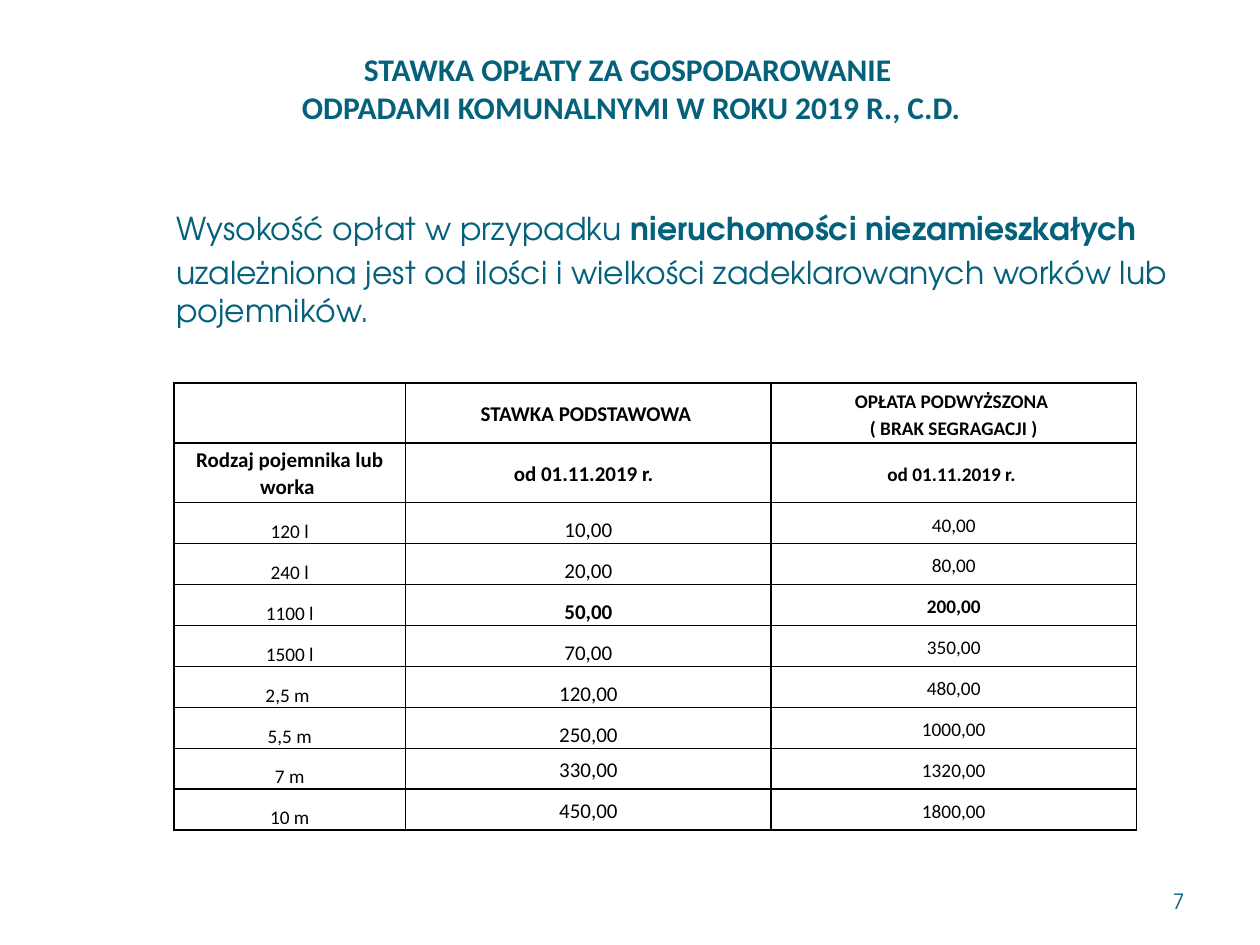
"""Build the slide with the 2019 waste fee rates for non-residential properties."""
from lxml.etree import SubElement
from pptx import Presentation
from pptx.dml.color import RGBColor
from pptx.enum.shapes import MSO_SHAPE as Preset
from pptx.enum.text import MSO_ANCHOR as Anchor, PP_ALIGN as Align
from pptx.oxml.ns import qn
from pptx.util import Inches, Pt

COLOURS = {"teal": "04617B", "black": "000000", "white": "FFFFFF"}
HEADING_FONT = "Calibri"
BODY_FONT = "TeX Gyre Adventor"


def add_span(para, text, size, name, colour, bold=False):
    """Append formatted text to a paragraph."""
    span = para.add_run()
    span.text = text
    for key, value in {"size": Pt(size), "name": name, "bold": bold}.items():
        setattr(span.font, key, value)
    span.font.color.rgb = RGBColor.from_string(COLOURS[colour])


def add_box(page, left, top, width, height, **frame_format):
    """Add a wrapping text box and return its text frame."""
    box = page.shapes.add_textbox(Inches(left), Inches(top), Inches(width), Inches(height))
    for key, value in {"word_wrap": True, **frame_format}.items():
        setattr(box.text_frame, key, value)
    return box.text_frame


deck = Presentation()
deck.slide_width, deck.slide_height = Inches(10), Inches(7.5)
page = deck.slides.add_slide(deck.slide_layouts[6])

panels = [
    (Preset.ROUNDED_RECTANGLE, (0.1, 0.11, 9.8, 7.29), 100),
    (Preset.RECTANGLE, (0.3, 0.3, 9.4, 1.45), 83),
    (Preset.RECTANGLE, (0.41, 0.41, 9.17, 1.22), 100),
]
for preset, place, opacity in panels:
    panel = page.shapes.add_shape(preset, *[Inches(length) for length in place])
    panel.shadow.inherit = False
    panel.line.fill.background()
    panel.fill.solid()
    panel.fill.fore_color.rgb = RGBColor.from_string(COLOURS["white"])
    if preset == Preset.ROUNDED_RECTANGLE:
        panel.adjustments[0] = 0.02
    if opacity < 100:
        tint = panel._element.spPr.find(qn("a:solidFill")).find(qn("a:srgbClr"))
        SubElement(tint, qn("a:alpha"), val=str(opacity * 1000))

title = add_box(page, 0.9, 0.4, 8.22, 0.75,
                vertical_anchor=Anchor.MIDDLE, margin_bottom=Inches(0.21))
para = title.paragraphs[0]
para.alignment = Align.CENTER
add_span(para, "STAWKA OPŁATY ZA GOSPODAROWANIE ", 18, HEADING_FONT, "teal", True)
para.add_line_break()
add_span(para, "ODPADAMI KOMUNALNYMI W ROKU 2019 R., C.D.", 18, HEADING_FONT, "teal", True)

body = add_box(page, 0.51, 1.26, 9, 5.56, margin_top=Inches(0.4))
intro = [
    [("Wysokość opłat w przypadku ", False), ("nieruchomości niezamieszkałych", True)],
    [("uzależniona jest od ilości i wielkości zadeklarowanych worków lub pojemników.", False)],
]
for index, parts in enumerate(intro):
    para = body.add_paragraph() if index else body.paragraphs[0]
    para.space_before = Pt(3.6 * index)
    para._p.get_or_add_pPr().set("marL", str(Inches(0.79)))
    for text, bold in parts:
        add_span(para, text, 18, BODY_FONT, "teal", bold)

number = add_box(page, 7.17, 6.95, 2.33, 0.4, vertical_anchor=Anchor.MIDDLE)
number.paragraphs[0].alignment = Align.RIGHT
add_span(number.paragraphs[0], "7", 12, BODY_FONT, "teal")

rates = [
    ("", "STAWKA PODSTAWOWA ", "OPŁATA PODWYŻSZONA \n( BRAK SEGRAGACJI )"),
    ("Rodzaj pojemnika lub worka ", "od 01.11.2019 r.  ", "od 01.11.2019 r. "),
    ("120 l", "10,00", "40,00"),
    ("240 l", "20,00", "80,00"),
    ("1100 l", "50,00", "200,00"),
    ("1500 l", "70,00", "350,00"),
    ("2,5 m ", "120,00", "480,00"),
    ("5,5 m", "250,00", "1000,00"),
    ("7 m", "330,00", "1320,00"),
    ("10 m", "450,00", "1800,00"),
]
header_rows = 2
bold_rates_row = 4
first_middle_row = 8
header_height = Inches(0.95) // header_rows
rate_height = Inches(2.6) // (len(rates) - header_rows)
table = page.shapes.add_table(len(rates), 3, Inches(1.38), Inches(3.04),
                              Inches(7.64), Inches(3.55)).table
table.first_row = table.horz_banding = False
for column, width in zip(table.columns, (1.84, 2.9, 2.9)):
    column.width = Inches(width)

for row, texts in enumerate(rates):
    is_header = row < header_rows
    table.rows[row].height = header_height if is_header else rate_height
    for col, text in enumerate(texts):
        cell = table.cell(row, col)
        at_bottom = not is_header and (col == 0 or col == 1 and row < first_middle_row)
        cell_format = {
            "vertical_anchor": Anchor.BOTTOM if at_bottom else Anchor.MIDDLE,
            "margin_left": Inches(0.01), "margin_right": Inches(0.01),
            "margin_top": Inches(0.01), "margin_bottom": 0,
        }
        for key, value in cell_format.items():
            setattr(cell, key, value)
        properties = cell._tc.get_or_add_tcPr()
        for side in ("a:lnL", "a:lnR", "a:lnT", "a:lnB"):
            border = SubElement(properties, qn(side), w=str(Pt(1)))
            fill = SubElement(border, qn("a:solidFill"))
            SubElement(fill, qn("a:srgbClr"), val=COLOURS["black"])
        cell.fill.background()

        size = 12 if col == 1 or (is_header and col == 0) else 11
        bold = is_header or (row == bold_rates_row and col > 0)
        for index, line in enumerate(text.split("\n") if text else []):
            para = cell.text_frame.add_paragraph() if index else cell.text_frame.paragraphs[0]
            para.alignment = Align.CENTER
            para.line_spacing = Pt(15.4)
            add_span(para, line, size, HEADING_FONT, "black", bold)

deck.save("out.pptx")
